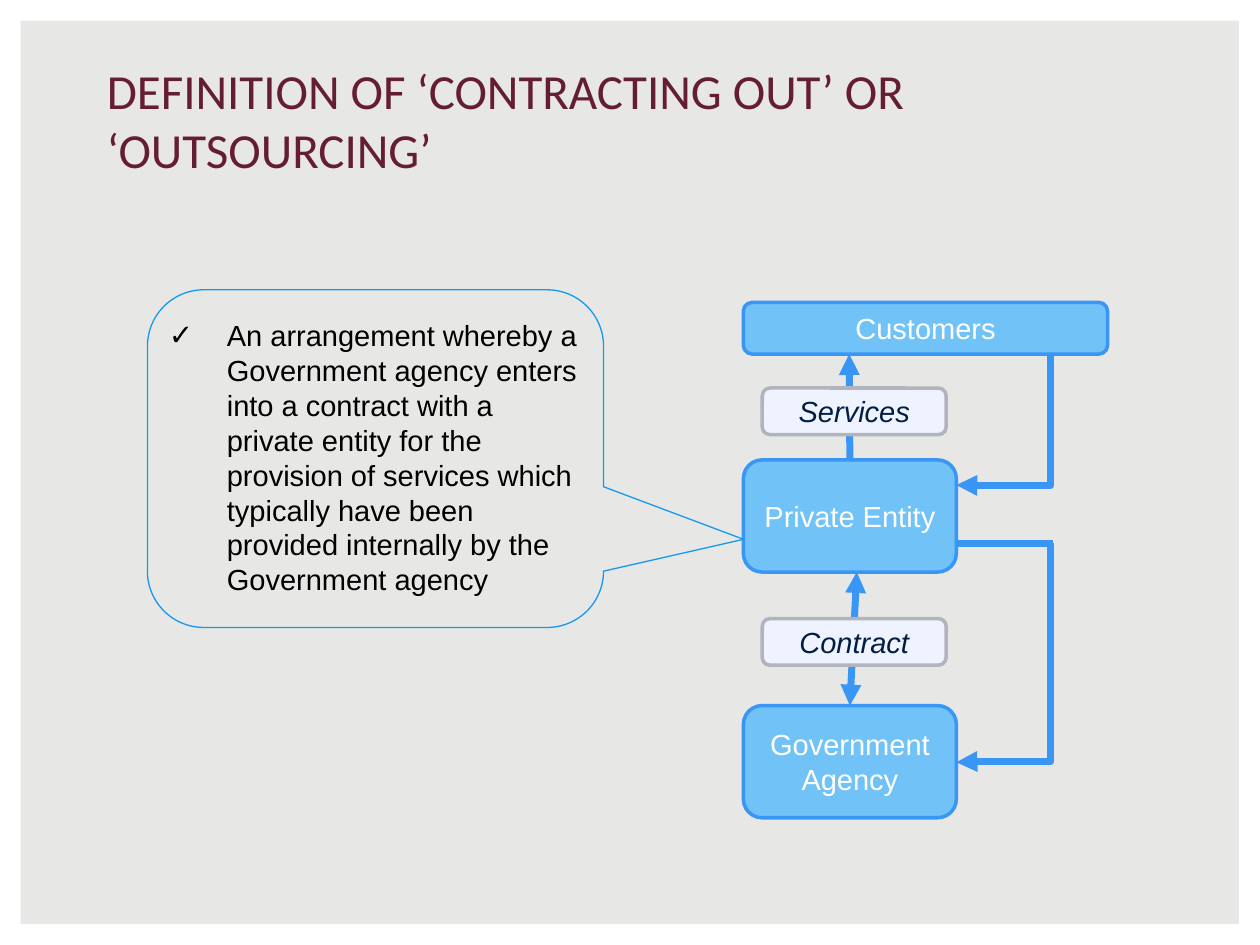
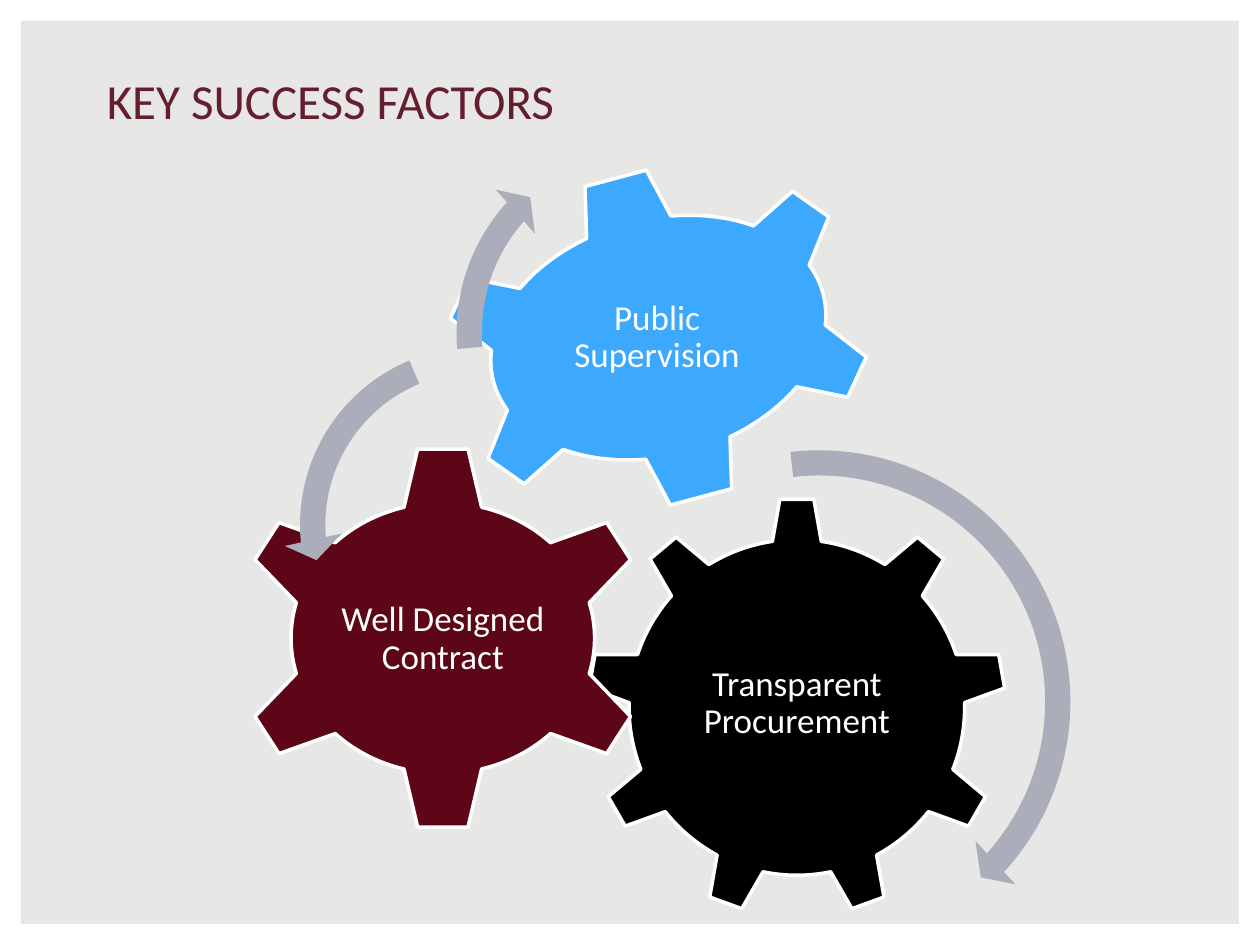
import pptx
import pptx.util
import pptx.dml.color
import pptx.enum.shapes
import pptx.enum.text
import pptx.oxml
import pptx.oxml.ns
import lxml.etree

Inches, Pt = pptx.util.Inches, pptx.util.Pt
RGB = pptx.dml.color.RGBColor
SHAPE = pptx.enum.shapes.MSO_SHAPE
CONNECTOR = pptx.enum.shapes.MSO_CONNECTOR
ALIGN = pptx.enum.text.PP_ALIGN
ANCHOR = pptx.enum.text.MSO_ANCHOR
qn = pptx.oxml.ns.qn

COLORS = {
    "background": "E7E7E5", "white": "FFFFFF", "black": "000000",
    "title": "651D32", "box": "71C2F6", "flow": "3A96F5",
    "callout": "139AF0", "label": "EFF3FF", "label line": "B1B4BD",
    "label text": "021F43", "maroon": "5D0618", "sky": "3CA9FF",
    "arrow": "ABADBA",
}


def add_figure(page, kind, place, fill=None, line=None, width=2):
    figure = page.shapes.add_shape(kind, *[Inches(value) for value in place])
    figure.shadow.inherit = False
    if fill:
        figure.fill.solid()
        figure.fill.fore_color.rgb = RGB.from_string(COLORS[fill])
    else:
        figure.fill.background()
    if line:
        figure.line.color.rgb = RGB.from_string(COLORS[line])
        figure.line.width = Pt(width)
    else:
        figure.line.fill.background()
    return figure


def write(box, text, size, color, font="Calibri", align=ALIGN.CENTER,
          anchor=ANCHOR.MIDDLE, italic=False):
    frame = box.text_frame
    frame.word_wrap = True
    frame.vertical_anchor = anchor
    para = frame.paragraphs[0]
    para.alignment = align
    span = para.add_run()
    span.text = text
    span.font.size = Pt(size)
    span.font.name = font
    span.font.italic = italic
    span.font.color.rgb = RGB.from_string(COLORS[color])
    return para


deck = pptx.Presentation()
deck.slide_width, deck.slide_height = Inches(10), Inches(7.5)

# Shared background, white frame and title
pages = []
for title, top, height in [
    ("DEFINITION OF ‘CONTRACTING OUT’ OR ‘OUTSOURCING’", 0.43, 1.5),
    ("KEY SUCCESS FACTORS", 0.51, 0.57),
]:
    page = deck.slides.add_slide(deck.slide_layouts[6])
    page.background.fill.solid()
    page.background.fill.fore_color.rgb = RGB.from_string(COLORS["background"])
    border = add_figure(page, SHAPE.FRAME, (0, 0, 10, 7.5), "white")
    border.adjustments[0] = 0.022
    box = page.shapes.add_textbox(Inches(0.75), Inches(top), Inches(8.5), Inches(height))
    write(box, title, 28, "title", align=ALIGN.LEFT, anchor=ANCHOR.TOP)
    pages.append(page)
definition, factors = pages

# Parties to the arrangement
parties = {}
for name, top, width, height in [
    ("Government Agency", 5.6, 1.69, 0.89),
    ("Private Entity", 3.65, 1.69, 0.89),
    ("Customers", 2.4, 2.89, 0.41),
]:
    box = add_figure(definition, SHAPE.ROUNDED_RECTANGLE, (5.9, top, width, height), "box", "flow")
    write(box, name, 16.6, "white", "Arial")
    parties[name] = box

# Definition callout with a check bullet
callout = add_figure(definition, SHAPE.ROUNDED_RECTANGULAR_CALLOUT,
                     (1.17, 2.3, 3.62, 2.68), line="callout", width=0.75)
for index, value in enumerate((0.807, 0.239, 0.167)):
    callout.adjustments[index] = value
callout.text_frame.margin_left = callout.text_frame.margin_right = 0
callout.text_frame.margin_top = callout.text_frame.margin_bottom = Inches(0.09)
para = write(callout, "An arrangement whereby a Government agency enters into a contract "
             "with a private entity for the provision of services which typically have "
             "been provided internally by the Government agency",
             16.6, "black", "Arial", ALIGN.LEFT, ANCHOR.TOP)
properties = para._p.get_or_add_pPr()
properties.set("marL", str(Inches(0.5)))
properties.set("indent", str(Inches(-0.46)))
lxml.etree.SubElement(properties, qn("a:buFont")).set("typeface", "Arial")
lxml.etree.SubElement(properties, qn("a:buChar")).set("char", "✓")

# Straight flows: start, end, arrowheads, party joined at the start
flows = []
for start, end, heads, party in [
    ((6.74, 5.6), (6.8, 4.54), ("headEnd", "tailEnd"), "Government Agency"),
    ((6.74, 3.65), (6.74, 2.81), ("tailEnd",), "Private Entity"),
    ((8.36, 4.31), (7.59, 4.31), (), None),
]:
    flow = definition.shapes.add_connector(
        CONNECTOR.STRAIGHT, *[Inches(value) for value in start + end])
    if party:
        flow.begin_connect(parties[party], 0)
    flows.append((flow, heads))

# Bent flows run down and then left, so each is an elbow turned by 90 degrees
for top, bottom, bend in [(2.81, 3.85, 100300), (4.31, 6.05, 99700)]:
    left, right = 7.59, 8.34
    middle_x, middle_y = (left + right) / 2, (top + bottom) / 2
    half_run, half_rise = (bottom - top) / 2, (right - left) / 2
    flow = definition.shapes.add_connector(
        CONNECTOR.ELBOW,
        Inches(middle_x - half_run), Inches(middle_y - half_rise),
        Inches(middle_x + half_run), Inches(middle_y + half_rise))
    flow.element.spPr.find(qn("a:xfrm")).set("rot", "5400000")
    guides = flow.element.spPr.find(qn("a:prstGeom")).find(qn("a:avLst"))
    guide = lxml.etree.SubElement(guides, qn("a:gd"))
    guide.set("name", "adj1")
    guide.set("fmla", f"val {bend}")
    flows.append((flow, ("tailEnd",)))

for flow, heads in flows:
    flow.line.color.rgb = RGB.from_string(COLORS["flow"])
    flow.line.width = Pt(4)
    for head in heads:
        lxml.etree.SubElement(flow.line._get_or_add_ln(), qn(f"a:{head}")).set("type", "triangle")
    lxml.etree.SubElement(flow.element.spPr, qn("a:effectLst"))

# Labels on the flows
for name, top in [("Contract", 4.91), ("Services", 3.08)]:
    label = add_figure(definition, SHAPE.ROUNDED_RECTANGLE, (6.05, top, 1.46, 0.37),
                       "label", "label line")
    write(label, name, 16.6, "label text", "Arial", italic=True)

# Gears, each with its caption
for text, kind, place, turn, fill, caption_place in [
    ("Transparent Procurement", SHAPE.GEAR_9, (4.66, 3.95, 3.33, 3.33), 0, "black",
     (5.33, 4.73, 1.99, 1.71)),
    ("Well Designed Contract", SHAPE.GEAR_6, (1.85, 3.53, 3.33, 3.07), 0, "maroon",
     (2.66, 4.31, 1.71, 1.52)),
    ("Public Supervision", SHAPE.GEAR_6, (3.47, 1.34, 3.51, 2.68), 345, "sky",
     (4.28, 1.88, 1.87, 1.6)),
]:
    gear = add_figure(factors, kind, place, fill, "white")
    gear.rotation = turn
    caption = factors.shapes.add_textbox(*[Inches(value) for value in caption_place])
    frame = caption.text_frame
    frame.margin_left = frame.margin_right = Inches(0.03)
    frame.margin_top = frame.margin_bottom = Inches(0.03)
    write(caption, text, 20, "white").line_spacing = 0.9

# Arrows showing how the gears turn
for kind, left, top, size, settings in [
    (SHAPE.CIRCULAR_ARROW, 4.37, 3.44, 4.26, (0.047, 2.99, 25.41, 158.09, 0.055)),
    (SHAPE.LEFT_CIRCULAR_ARROW, 2.25, 2.62, 3.09, (0.065, 4.3, 104.89, 148.38, 0.075)),
    (SHAPE.CIRCULAR_ARROW, 3.49, 0.97, 3.34, (0.06, 3.94, 133.14, 105.08, 0.07)),
]:
    arrow = add_figure(factors, kind, (left, top, size, size), "arrow")
    for index, value in enumerate(settings):
        arrow.adjustments[index] = value

deck.save("out.pptx")
